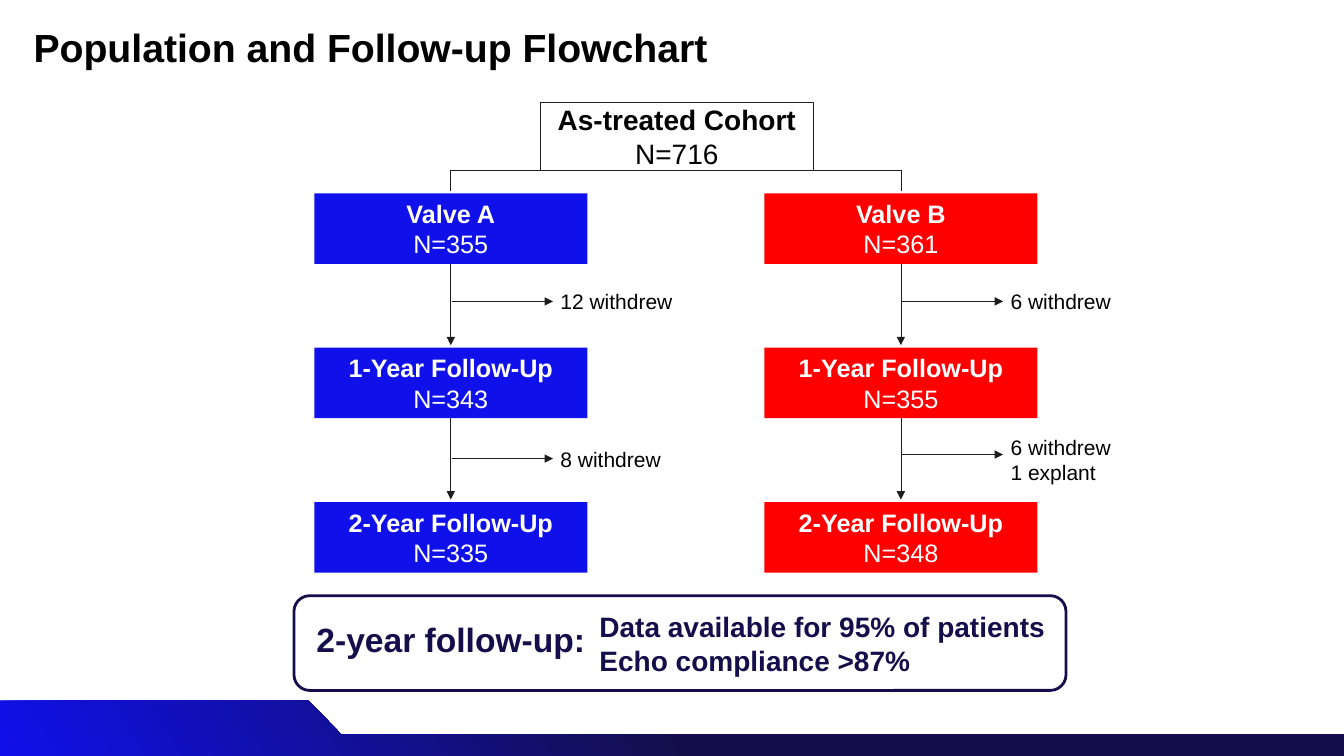
import pptx
import pptx.chart.data
import pptx.dml.color
import pptx.enum.shapes
import pptx.enum.text
import pptx.oxml
import pptx.oxml.ns
import pptx.util

Pt = pptx.util.Pt
SHAPES = pptx.enum.shapes.MSO_SHAPE
ALIGN = pptx.enum.text.PP_ALIGN
ANCHOR = pptx.enum.text.MSO_ANCHOR

FONT = "Arial"
NAVY, BLUE, RED = "140F4B", "1010EB", "FF0000"
BLACK, WHITE, INK = "000000", "FFFFFF", "1E1E1E"
BOX_WIDTH, BOX_HEIGHT, ROW_PITCH = 195, 50.4, 110.2
FORK_Y, FIRST_ROW = 121.7, 138.2

ARMS = [
    (322, BLUE,
     [("Valve A", "N=355"), ("1-Year Follow-Up", "N=343"), ("2-Year Follow-Up", "N=335")],
     [("12 withdrew", 26.7, 9), ("8 withdrew", 28.8, 9)]),
    (643.5, RED,
     [("Valve B", "N=361"), ("1-Year Follow-Up", "N=355"), ("2-Year Follow-Up", "N=348")],
     [("6 withdrew", 26.7, 9), ("6 withdrew\n1 explant", 25.9, 14.4)]),
]


def rgb(hex_color):
    """Turn a hex string into a colour."""
    return pptx.dml.color.RGBColor.from_string(hex_color)


def write(part, text, size, color, bold, align=ALIGN.LEFT, anchor=ANCHOR.MIDDLE):
    """Fill a part with text; bold has one flag per paragraph."""
    frame = part.text_frame
    frame.margin_left = frame.margin_right = frame.margin_top = frame.margin_bottom = 0
    frame.word_wrap = True
    frame.vertical_anchor = anchor
    frame.text = text
    for paragraph, is_bold in zip(frame.paragraphs, bold):
        paragraph.alignment = align
        for run in paragraph.runs:
            run.font.name, run.font.size, run.font.bold = FONT, Pt(size), is_bold
            run.font.color.rgb = rgb(color)


def add_label(slide, left, top, width, height, text, size, color, bold):
    """Place plain text in the given box."""
    label = slide.shapes.add_textbox(Pt(left), Pt(top), Pt(width), Pt(height))
    write(label, text, size, color, bold, anchor=ANCHOR.TOP)


def add_panel(slide, kind, left, top, width, height, fill=None, line=None, weight=0.75):
    """Draw a flat preset shape with optional fill and outline."""
    panel = slide.shapes.add_shape(kind, Pt(left), Pt(top), Pt(width), Pt(height))
    panel.shadow.inherit = False
    if fill:
        panel.fill.solid()
        panel.fill.fore_color.rgb = rgb(fill)
    else:
        panel.fill.background()
    if line:
        panel.line.color.rgb = rgb(line)
        panel.line.width = Pt(weight)
    else:
        panel.line.fill.background()
    return panel


def add_line(slide, x1, y1, x2, y2, arrow=False):
    """Draw a thin straight line, with an arrowhead at its end if asked."""
    line = slide.shapes.add_connector(
        pptx.enum.shapes.MSO_CONNECTOR.STRAIGHT, Pt(x1), Pt(y1), Pt(x2), Pt(y2))
    line.line.color.rgb = rgb(INK)
    line.line.width = Pt(0.5)
    if arrow:
        head = pptx.oxml.parse_xml(
            f'<a:tailEnd {pptx.oxml.ns.nsdecls("a")} type="triangle"/>')
        line.line._get_or_add_ln().append(head)
    line._element.spPr.append(
        pptx.oxml.parse_xml(f'<a:effectLst {pptx.oxml.ns.nsdecls("a")}/>'))


def add_footer(slide, top, width, height):
    """Draw the stepped gradient band along the bottom edge."""
    shoulder = top + 24.5
    builder = slide.shapes.build_freeform(Pt(0), Pt(top))
    builder.add_line_segments([
        (Pt(x), Pt(y)) for x, y in
        [(220.3, top), (244.1, shoulder), (width, shoulder),
         (width, top + height), (0, top + height)]])
    band = builder.convert_to_shape()
    band.shadow.inherit = False
    band.line.fill.background()
    band.fill.gradient()
    band.fill.gradient_angle = 30
    for stop, position, color in zip(band.fill.gradient_stops, (0, 0.5), (BLUE, NAVY)):
        stop.position = position
        stop.color.rgb = rgb(color)


def add_title(slide, left, top, width, height):
    """Place the slide title in its placeholder."""
    title = slide.shapes.title
    title.left, title.top, title.width, title.height = map(Pt, (left, top, width, height))
    write(title, "Population and Follow-up Flowchart", 28, BLACK, [True])
    title.text_frame.paragraphs[0].line_spacing = 0.9


def add_cohort(slide, left, top, width, height):
    """Draw the starting cohort and the fork to both arms."""
    cohort = add_panel(slide, SHAPES.RECTANGLE, left, top, width, height, WHITE, INK)
    write(cohort, "As-treated Cohort\nN=716", 20, BLACK, [True, False], ALIGN.CENTER)
    axes = [arm[0] for arm in ARMS]
    add_line(slide, axes[0], FORK_Y, axes[-1], FORK_Y)
    for axis in axes:
        add_line(slide, axis, FORK_Y, axis, FORK_Y + 15)


def add_arm(slide, axis, top, color, stages, losses):
    """Draw one arm: its stages downward and the losses between them."""
    for row, stage in enumerate(stages):
        box = add_panel(slide, SHAPES.RECTANGLE, axis - BOX_WIDTH / 2,
                        top + row * ROW_PITCH, BOX_WIDTH, BOX_HEIGHT, color)
        write(box, "\n".join(stage), 18, WHITE, [True, False], ALIGN.CENTER)
    for row, (loss, drop, rise) in enumerate(losses):
        start = top + row * ROW_PITCH + BOX_HEIGHT
        branch = start + drop
        add_line(slide, axis, start, axis, start + 58, arrow=True)
        add_line(slide, axis + 1, branch, axis + 73, branch, arrow=True)
        add_label(slide, axis + 78.3, branch - rise, 111.6, 2 * rise,
                  loss, 15, BLACK, [False, False])


def add_summary(slide, left, top, width, height):
    """Draw the rounded summary of two-year follow-up."""
    add_panel(slide, SHAPES.ROUNDED_RECTANGLE, left, top, width, height, line=NAVY, weight=2)
    add_label(slide, left + 16, top + 16.5, 195, 27.4, "2-year follow-up:", 24, NAVY, [True])
    add_label(slide, left + 218.2, top + 10, 342.7, 48.3,
              "Data available for 95% of patients\nEcho compliance >87%",
              20, NAVY, [True, True])


def main():
    """Build and save the slide."""
    deck = pptx.Presentation()
    deck.slide_width, deck.slide_height = Pt(960), Pt(540)
    slide = deck.slides.add_slide(deck.slide_layouts.get_by_name("Title Only"))
    add_footer(slide, 500.4, 960, 39.6)
    add_title(slide, 24, 19.4, 912, 31.7)
    add_cohort(slide, 386, 73.4, BOX_WIDTH, 48.3)
    for axis, color, stages, losses in ARMS:
        add_arm(slide, axis, FIRST_ROW, color, stages, losses)
    add_summary(slide, 210, 425.5, 551.5, 67.7)
    deck.save("out.pptx")


if __name__ == "__main__":
    main()
